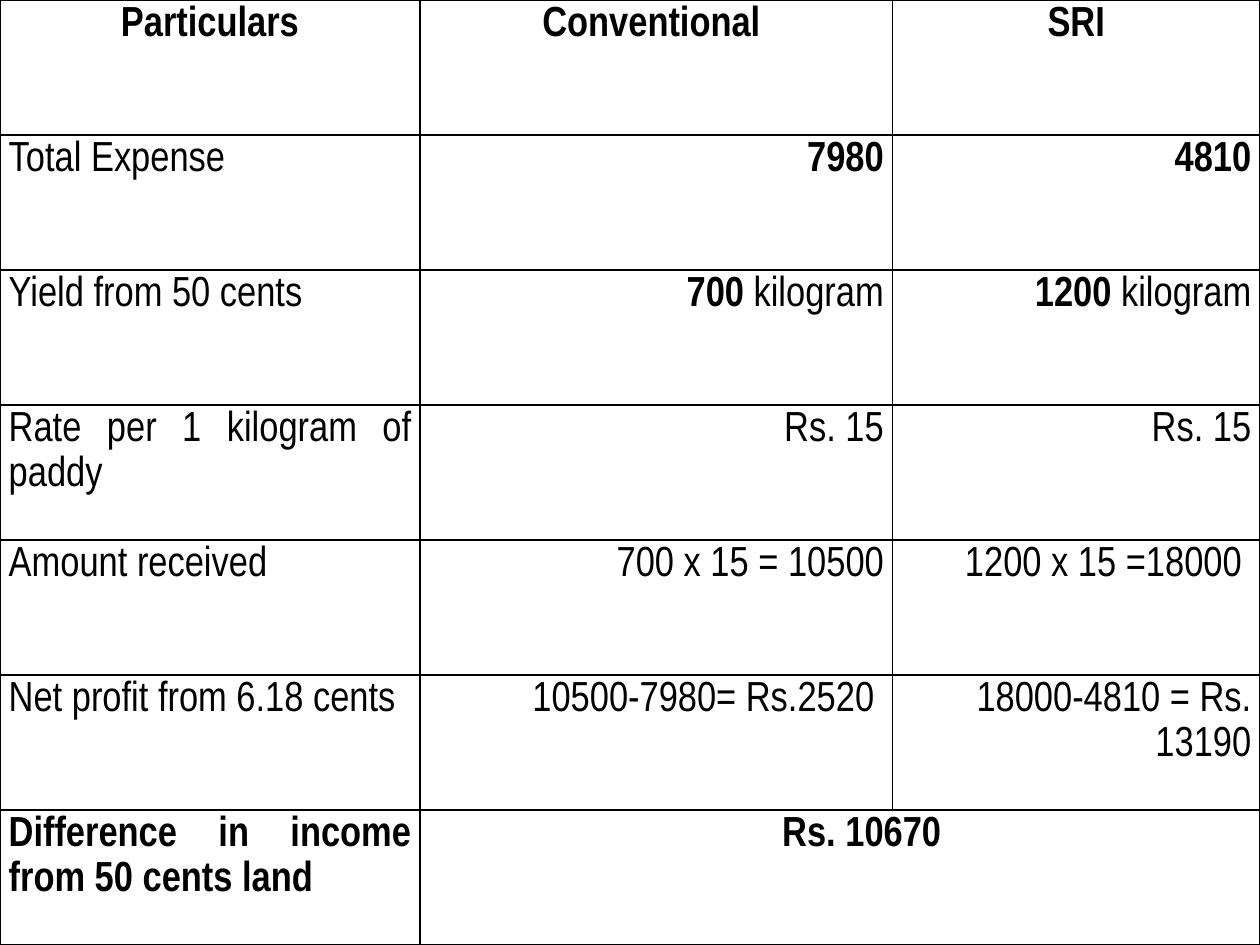
import pptx
import pptx.dml.color
import pptx.enum.text
import pptx.oxml
import pptx.oxml.ns
import pptx.util
from dataclasses import dataclass

Pt = pptx.util.Pt
ALIGN = pptx.enum.text.PP_ALIGN


@dataclass(frozen=True)
class Theme:
    font: str = "Arial Narrow"
    size: float = 24
    line_spacing: float = 1.15
    ink: str = "000000"
    paper: str = "FFFFFF"
    border: float = 1
    inset: float = 5


THEME = Theme()
COLUMN_SHARES = (8, 9, 7)

# Each cell is a list of (text, bold) runs
ROWS = [
    [[("Particulars", True)], [("Conventional ", True)], [("SRI", True)]],
    [[("Total Expense", False)], [("7980", True)], [("4810", True)]],
    [[("Yield from 50 cents", False)],
     [("700 ", True), ("kilogram", False)],
     [("1200", True), (" kilogram", False)]],
    [[("Rate per 1 kilogram of paddy", False)], [("Rs. 15", False)], [("Rs. 15", False)]],
    [[("Amount received ", False)], [("700 x 15 = 10500", False)], [("1200 x 15 =18000 ", False)]],
    [[("Net profit from 6.18 cents", False)],
     [("10500-7980= Rs.2520 ", False)],
     [("18000-4810 = Rs. 13190", False)]],
    [[("Difference in income from 50 cents land", True)], [("Rs. 10670", True)]],
]


def set_values(target, values):
    for name, value in values.items():
        setattr(target, name, value)


def add_borders(cell):
    properties = cell._tc.get_or_add_tcPr()
    for position, edge in enumerate(("lnL", "lnR", "lnT", "lnB")):
        line = pptx.oxml.parse_xml(
            f'<a:{edge} {pptx.oxml.ns.nsdecls("a")} w="{Pt(THEME.border)}">'
            f'<a:solidFill><a:srgbClr val="{THEME.ink}"/></a:solidFill></a:{edge}>')
        properties.insert(position, line)


def fill_cell(cell, runs, alignment, left_inset=THEME.inset):
    set_values(cell, {"margin_left": Pt(left_inset), "margin_right": Pt(THEME.inset),
                      "margin_top": 0, "margin_bottom": 0})
    paragraph = cell.text_frame.paragraphs[0]
    set_values(paragraph, {"alignment": alignment, "line_spacing": THEME.line_spacing})
    for text, bold in runs:
        run = paragraph.add_run()
        run.text = text
        set_values(run.font, {"name": THEME.font, "size": Pt(THEME.size), "bold": bold})
        run.font.color.rgb = pptx.dml.color.RGBColor.from_string(THEME.ink)


def add_comparison_table(slide, left, top, width, height):
    table = slide.shapes.add_table(len(ROWS), len(COLUMN_SHARES), Pt(left), Pt(top),
                                   Pt(width), Pt(height)).table
    set_values(table, {"first_row": False, "horz_banding": False})
    for column, share in zip(table.columns, COLUMN_SHARES):
        column.width = Pt(width * share / sum(COLUMN_SHARES))
    for row in table.rows:
        row.height = Pt(height / len(ROWS))

    # Plain cells with ruled edges
    for cell in table.iter_cells():
        cell.fill.solid()
        cell.fill.fore_color.rgb = pptx.dml.color.RGBColor.from_string(THEME.paper)
        add_borders(cell)

    # The income difference spans both methods
    last = len(ROWS) - 1
    table.cell(last, 1).merge(table.cell(last, 2))

    for row_index, row in enumerate(ROWS):
        for column_index, runs in enumerate(row):
            cell = table.cell(row_index, column_index)
            if row_index == 0:
                fill_cell(cell, runs, ALIGN.CENTER)
            elif column_index == 0:
                fill_cell(cell, runs, ALIGN.JUSTIFY)
            elif row_index == last:
                fill_cell(cell, runs, ALIGN.LEFT, left_inset=207)
            else:
                fill_cell(cell, runs, ALIGN.RIGHT)


def main():
    presentation = pptx.Presentation()
    set_values(presentation, {"slide_width": Pt(720), "slide_height": Pt(540)})
    slide = presentation.slides.add_slide(presentation.slide_layouts[6])
    add_comparison_table(slide, 0, 0, 720, 540)
    presentation.save("out.pptx")


if __name__ == "__main__":
    main()
